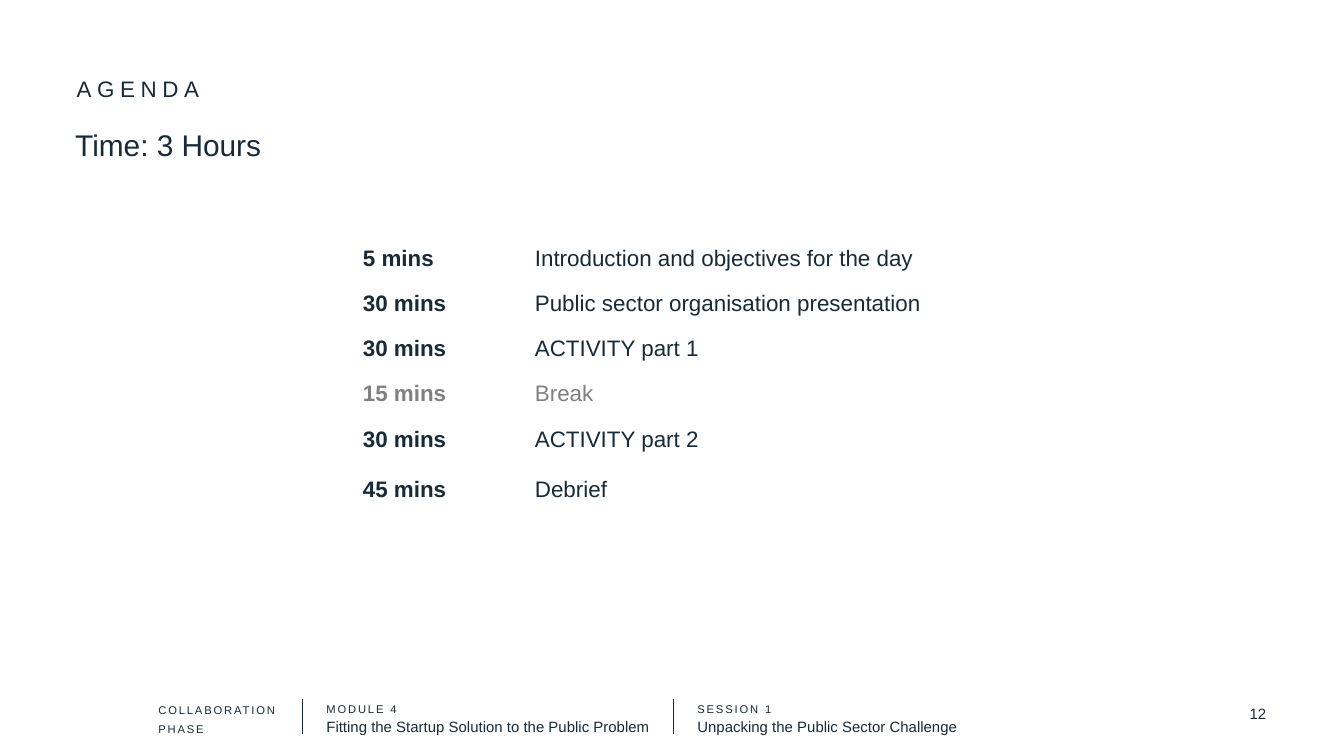
"""Build the agenda slide with its timetable and footer."""
import pptx
import pptx.dml.color
import pptx.enum.shapes
import pptx.enum.text
import pptx.oxml
import pptx.oxml.ns
import pptx.util

Inches = pptx.util.Inches
Pt = pptx.util.Pt
ALIGN = pptx.enum.text.PP_ALIGN
ANCHOR = pptx.enum.text.MSO_ANCHOR

AGENDA = [
    [("5 mins", "Introduction and objectives for the day")],
    [("30 mins", "Public sector organisation presentation")],
    [("30 mins", "ACTIVITY part 1")],
    [("15 mins", "Break")],
    [("30 mins", "ACTIVITY part 2"), ("45 mins", "Debrief")],
    [],
    [],
]


def color(value):
    return pptx.dml.color.RGBColor.from_string(value)


def element(tag):
    return pptx.oxml.parse_xml(f"<{tag} {pptx.oxml.ns.nsdecls('a')}/>")


def write(para, text, size=12, ink="172A38", bold=False, spacing=0,
          align=ALIGN.LEFT, line=None, before=0, after=0):
    para.alignment = align
    para.line_spacing = Pt(line) if line else 1.0
    para.space_before = Pt(before)
    para.space_after = Pt(after)
    span = para.add_run()
    span.text = text
    span.font.name = "Arial"
    span.font.size = Pt(size)
    span.font.bold = bold
    span.font.color.rgb = color(ink)
    if spacing:
        span._r.get_or_add_rPr().set("spc", str(spacing * 100))


class AgendaSlide:
    ink = "172A38"
    muted = "808080"

    def __init__(self, deck):
        self.page = deck.slides.add_slide(deck.slide_layouts[1])

    def frame(self, box, inset=0.1, anchor=ANCHOR.TOP):
        frame = box.text_frame
        frame.word_wrap = True
        frame.auto_size = pptx.enum.text.MSO_AUTO_SIZE.NONE
        frame.vertical_anchor = anchor
        frame.margin_left = frame.margin_right = Inches(0.1)
        frame.margin_top = frame.margin_bottom = Inches(inset)
        return frame

    def placeholder(self, index, left, top, width, height, text, inset=0.1, **style):
        box = self.page.placeholders[index]
        box.left, box.top = Inches(left), Inches(top)
        box.width, box.height = Inches(width), Inches(height)
        para = self.frame(box, inset).paragraphs[0]
        properties = para._p.get_or_add_pPr()
        properties.set("marL", "0")
        properties.set("indent", "0")
        properties.append(element("a:buNone"))
        write(para, text, ink=self.ink, **style)

    def text(self, left, top, width, height, lines, anchor=ANCHOR.TOP, **style):
        box = self.page.shapes.add_textbox(
            Inches(left), Inches(top), Inches(width), Inches(height))
        frame = self.frame(box, anchor=anchor)
        for number, (text, size, spacing) in enumerate(lines):
            para = frame.add_paragraph() if number else frame.paragraphs[0]
            write(para, text, size=size, spacing=spacing, ink=self.ink, **style)

    def divider(self, left, top=5.2, bottom=5.46):
        line = self.page.shapes.add_connector(
            pptx.enum.shapes.MSO_CONNECTOR.STRAIGHT,
            Inches(left), Inches(top), Inches(left), Inches(bottom))
        line.line.color.rgb = color(self.ink)
        line.line.width = Pt(0.5)
        line._element.spPr.append(element("a:effectLst"))

    def timetable(self, left, top, widths, row_height, rows):
        table = self.page.shapes.add_table(
            len(rows), len(widths), Inches(left), Inches(top),
            Inches(sum(widths)), Inches(row_height * len(rows))).table
        table.first_row = table.horz_banding = False
        for column, width in zip(table.columns, widths):
            column.width = Inches(width)
        for row, entries in zip(table.rows, rows):
            row.height = Inches(row_height)
            for column, cell in enumerate(row.cells):
                cell.fill.background()
                cell.margin_left = cell.margin_right = Inches(0.1)
                cell.margin_top, cell.margin_bottom = Inches(0.07), Inches(0.08)
                frame = cell.text_frame
                for number, entry in enumerate(entries):
                    para = frame.add_paragraph() if number else frame.paragraphs[0]
                    ink = self.muted if entry[1] == "Break" else self.ink
                    write(para, entry[column], ink=ink, bold=column == 0,
                          before=13.5 if number else 0)


def main():
    deck = pptx.Presentation()
    deck.slide_width, deck.slide_height = Inches(10), Inches(10 * 9 / 16)
    slide = AgendaSlide(deck)
    slide.text(1.08, 5.09, 1.15, 0.47,
               [("COLLABORATION", 6, 1), ("PHASE", 6, 1)], line=10.2)
    slide.text(2.33, 5.08, 3.32, 0.47,
               [("MODULE 4", 6, 1),
                ("Fitting the Startup Solution to the Public Problem", 8, 0)], line=10.6)
    slide.text(5.09, 5.08, 2.99, 0.47,
               [("SESSION 1", 6, 1),
                ("Unpacking the Public Sector Challenge", 8, 0)], line=10.6)
    for left in (2.25, 5.01):
        slide.divider(left)
    slide.text(8.49, 5.16, 1.03, 0.3, [("12", 8, 0)],
               anchor=ANCHOR.MIDDLE, align=ALIGN.RIGHT)
    slide.placeholder(1, 0.46, 0.9, 9.07, 4.16, "Time: 3 Hours",
                      inset=0.04, size=16, after=12)
    slide.placeholder(0, 0.47, 0.46, 9.06, 0.38, "AGENDA", spacing=3)
    slide.timetable(2.6, 1.76, (1.28, 4.2), 0.31, AGENDA)
    deck.save("out.pptx")


if __name__ == "__main__":
    main()
